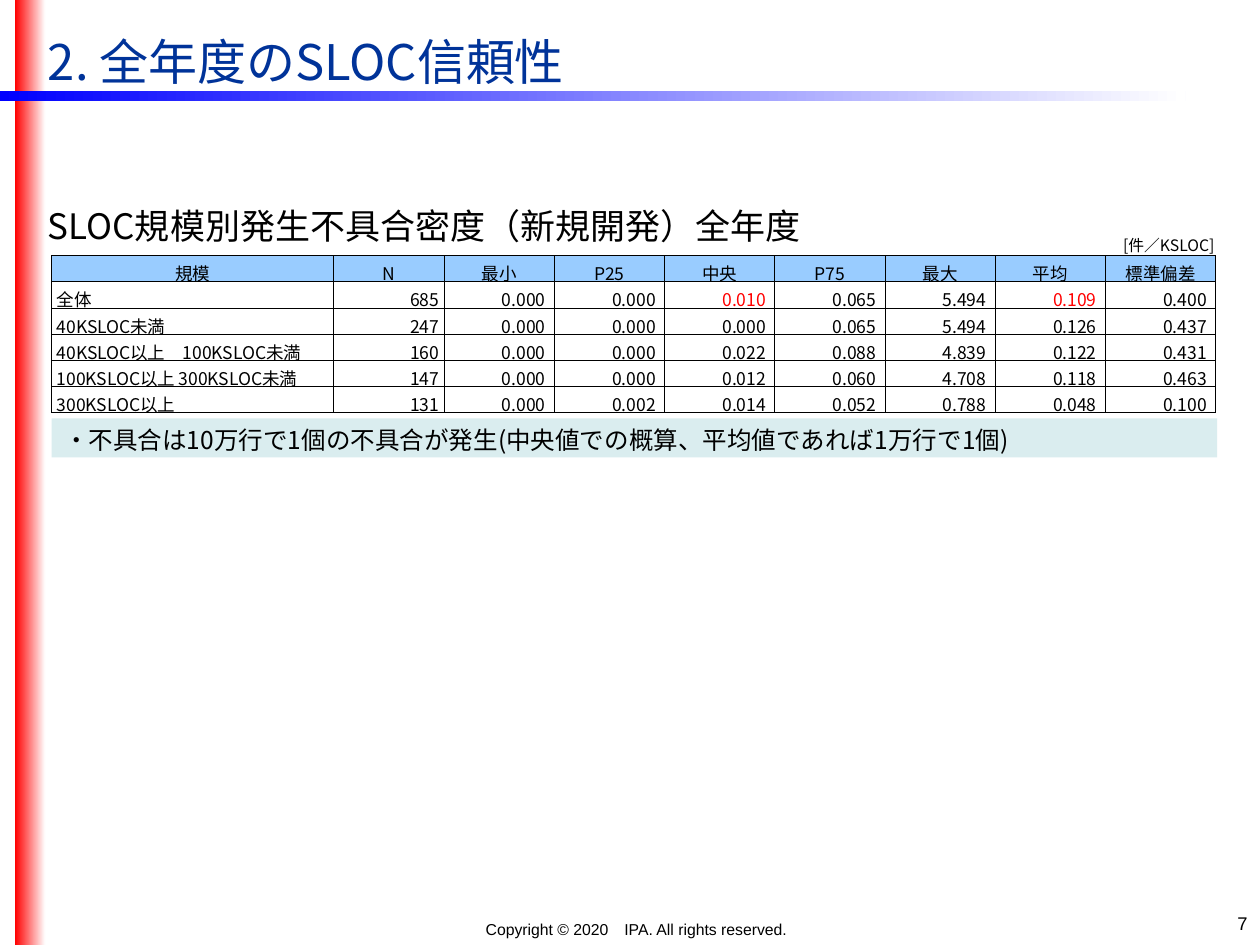
import pptx
import pptx.util
import pptx.dml.color
import pptx.enum.shapes
import pptx.enum.text
import pptx.oxml
import pptx.oxml.ns
import lxml.etree

Inches = pptx.util.Inches
RGBColor = pptx.dml.color.RGBColor
Align = pptx.enum.text.PP_ALIGN
Anchor = pptx.enum.text.MSO_ANCHOR

BLACK = RGBColor(0x00, 0x00, 0x00)
WHITE = RGBColor(0xFF, 0xFF, 0xFF)
RED = RGBColor(0xFF, 0x00, 0x00)
BLUE = RGBColor(0x00, 0x00, 0xFF)
NAVY = RGBColor(0x00, 0x33, 0x99)
SKY = RGBColor(0x99, 0xCC, 0xFF)
PALE_TEAL = RGBColor(0xDA, 0xED, 0xEF)
JAPANESE = "Noto Sans CJK JP"
LATIN = "Arial"

UNIT = "[件／KSLOC]"
HEADINGS = ["規模", "N", "最小", "P25", "中央", "P75", "最大", "平均", "標準偏差"]
DENSITIES = [
    ["全体", 685, 0.000, 0.000, 0.010, 0.065, 5.494, 0.109, 0.400],
    ["40KSLOC未満", 247, 0.000, 0.000, 0.000, 0.065, 5.494, 0.126, 0.437],
    ["40KSLOC以上　100KSLOC未満", 160, 0.000, 0.000, 0.022, 0.088, 4.839, 0.122, 0.431],
    ["100KSLOC以上 300KSLOC未満", 147, 0.000, 0.000, 0.012, 0.060, 4.708, 0.118, 0.463],
    ["300KSLOC以上", 131, 0.000, 0.002, 0.014, 0.052, 0.788, 0.048, 0.100],
]
HIGHLIGHTED = {(2, 4), (2, 7)}


def write_text(text_frame, text, size, font_name=JAPANESE, color=BLACK, alignment=Align.LEFT):
    text_frame.text = text
    paragraph = text_frame.paragraphs[0]
    paragraph.alignment = alignment
    for run in paragraph.runs:
        run.font.size = pptx.util.Pt(size)
        run.font.name = font_name
        run.font.color.rgb = color
        east_asian = lxml.etree.SubElement(run.font._element, pptx.oxml.ns.qn("a:ea"))
        east_asian.set("typeface", font_name)


def place(shape, box):
    shape.left, shape.top, shape.width, shape.height = [Inches(value) for value in box]


def add_rectangle(slide, box):
    shape = slide.shapes.add_shape(
        pptx.enum.shapes.MSO_SHAPE.RECTANGLE, *[Inches(value) for value in box])
    shape.shadow.inherit = False
    shape.line.fill.background()
    return shape


def add_gradient_bar(slide, box, color):
    bar = add_rectangle(slide, box)
    bar.fill.gradient()
    bar.fill.gradient_angle = 0
    for stop, stop_color in zip(bar.fill.gradient_stops, (color, WHITE)):
        stop.color.rgb = stop_color


def add_label(slide, box, text, size, **style):
    label = slide.shapes.add_textbox(*[Inches(value) for value in box])
    label.text_frame.word_wrap = True
    write_text(label.text_frame, text, size, **style)


def add_title(slide, box):
    title = slide.shapes.title
    place(title, box)
    title.text_frame.vertical_anchor = Anchor.MIDDLE
    title.text_frame.auto_size = pptx.enum.text.MSO_AUTO_SIZE.NONE
    write_text(title.text_frame, "2. 全年度のSLOC信頼性", 28, color=NAVY)


def add_note(slide, box):
    note = add_rectangle(slide, box)
    note.fill.solid()
    note.fill.fore_color.rgb = PALE_TEAL
    note.text_frame.word_wrap = True
    note.text_frame.vertical_anchor = Anchor.TOP
    write_text(
        note.text_frame,
        "・不具合は10万行で1個の不具合が発生(中央値での概算、平均値であれば1万行で1個)", 14)


def set_borders(cell, drawn_sides):
    properties = cell._tc.get_or_add_tcPr()
    for index, side in enumerate("LRTB"):
        paint = f'<a:solidFill><a:srgbClr val="{BLACK}"/></a:solidFill>'
        if side not in drawn_sides:
            paint = "<a:noFill/>"
        namespace = pptx.oxml.ns.nsdecls("a")
        properties.insert(index, pptx.oxml.parse_xml(
            f'<a:ln{side} {namespace} w="6350">{paint}</a:ln{side}>'))


def format_cell(cell, row, column, value):
    is_unit_row, is_header = row == 0, row == 1
    margin = 0.01 if is_unit_row else 0.04
    cell.margin_left = cell.margin_right = cell.margin_top = Inches(margin)
    cell.margin_bottom = 0
    cell.vertical_anchor = Anchor.MIDDLE if is_header else Anchor.BOTTOM
    if is_header:
        cell.fill.solid()
        cell.fill.fore_color.rgb = SKY
        alignment = Align.CENTER
    else:
        cell.fill.background()
        alignment = Align.RIGHT if column or is_unit_row else Align.LEFT
    text = f"{value:.3f} " if isinstance(value, float) else str(value)
    color = RED if (row, column) in HIGHLIGHTED else BLACK
    write_text(cell.text_frame, text, 9 if is_unit_row else 10,
               color=color, alignment=alignment)
    if not text:
        ending = lxml.etree.SubElement(
            cell.text_frame.paragraphs[0]._p, pptx.oxml.ns.qn("a:endParaRPr"))
        ending.set("sz", "900")
    set_borders(cell, "B" if is_unit_row else "LRTB")


def add_density_table(slide, box):
    rows = [[""] * (len(HEADINGS) - 1) + [UNIT], HEADINGS] + DENSITIES
    left, top, width, height = [Inches(value) for value in box]
    table = slide.shapes.add_table(
        len(rows), len(HEADINGS), left, top, width, height).table
    table.first_row = table.horz_banding = False
    label_width = Inches(2.24)
    unit_height = Inches(0.19)
    for index, column in enumerate(table.columns):
        column.width = (width - label_width) // (len(HEADINGS) - 1) if index else label_width
    for index, row in enumerate(table.rows):
        row.height = (height - unit_height) // (len(rows) - 1) if index else unit_height
    for row, values in enumerate(rows):
        for column, value in enumerate(values):
            format_cell(table.cell(row, column), row, column, value)


def add_footer(slide, box):
    left, top, width, height = box
    add_label(slide, (left + 2.02, top + 0.06, 6.06, 0.25),
              "Copyright © 2020　IPA. All rights reserved.", 9,
              font_name=LATIN, alignment=Align.CENTER)
    add_label(slide, (left + width - 2.33, top, 2.33, height), "7", 10.5,
              font_name=LATIN, alignment=Align.RIGHT)


def main():
    presentation = pptx.Presentation()
    presentation.slide_width = Inches(10)
    presentation.slide_height = Inches(7.5)
    slide = presentation.slides.add_slide(presentation.slide_layouts[5])
    add_gradient_bar(slide, (0.12, 0, 0.24, 7.5), RED)
    add_gradient_bar(slide, (0, 0.72, 9.41, 0.08), BLUE)
    add_footer(slide, (0, 7.19, 10, 0.31))
    add_title(slide, (0.28, 0.17, 9.13, 0.63))
    add_label(slide, (0.28, 1.57, 7.92, 0.44),
              "SLOC規模別発生不具合密度（新規開発）全年度", 20)
    add_note(slide, (0.41, 3.32, 9.25, 0.31))
    add_density_table(slide, (0.41, 1.84, 9.24, 1.43))
    presentation.save("out.pptx")


if __name__ == "__main__":
    main()
